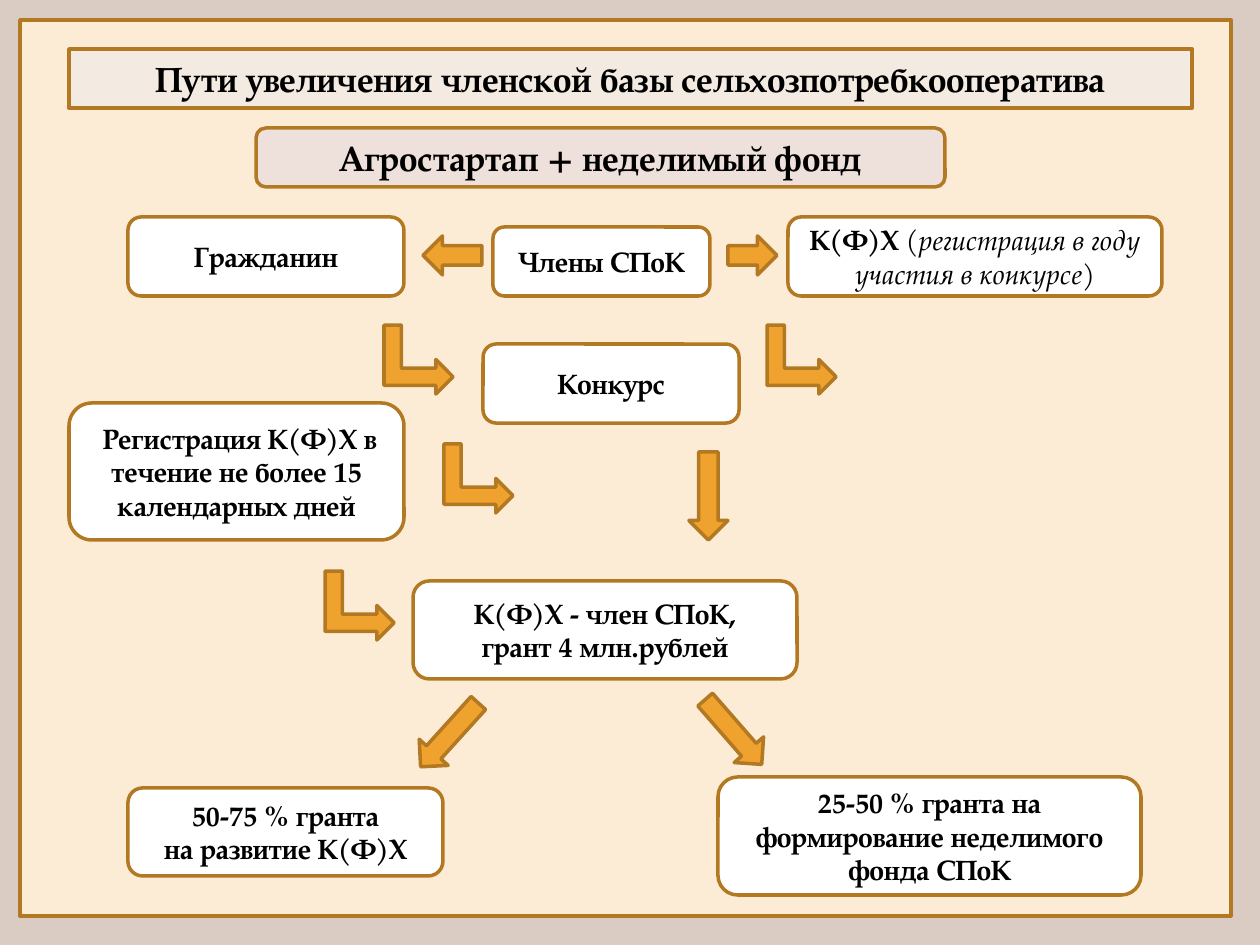
import pptx
import pptx.util
import pptx.dml.color
import pptx.enum.shapes
import pptx.enum.text
import pptx.oxml.ns
import lxml.etree

FONT = "TeX Gyre Pagella"
EDGE = "B27822"
GOLD = "F0A22E"
KIND = pptx.enum.shapes.MSO_SHAPE

BOXES = [
    ((256, 128, 689, 59), "Агростартап + неделимый фонд", "EEE0DB", 20),
    ((128, 217, 276, 79), "Гражданин", "FFFFFF", 16),
    ((493, 227, 217, 69), "Члены СПоК", "FFFFFF", 16),
    ((483, 344, 256, 79), "Конкурс", "FFFFFF", 16),
    ((69, 403, 335, 137), " Регистрация К(Ф)Х в течение не более 15 календарных дней", "FFFFFF", 16),
    ((413, 581, 384, 98), "К(Ф)Х - член СПоК,\nгрант 4 млн.рублей", "FFFFFF", 16),
    ((128, 788, 315, 88), "50-75 % гранта\nна развитие К(Ф)Х", "FFFFFF", 16),
    ((718, 777, 423, 118), "25-50 % гранта на формирование неделимого фонда СПоК", "FFFFFF", 16),
]
BENDS = [(384, 325), (767, 325), (444, 444), (325, 571)]
ARROWS = [
    (KIND.LEFT_ARROW, (423, 236, 59, 39), 0),
    (KIND.RIGHT_ARROW, (728, 236, 49, 39), 0),
    (KIND.DOWN_ARROW, (689, 452, 39, 88), 0),
    (KIND.DOWN_ARROW, (430, 692, 39, 86), 42.2),
    (KIND.DOWN_ARROW, (714, 689, 39, 86), 318.9),
]


def px(n):
    return pptx.util.Emu(round(n * 914400 / 126))


def tint(hue):
    return pptx.dml.color.RGBColor.from_string(hue)


def apply(item, form):
    for key, value in form.items():
        setattr(item, key, value)


def place(item, area):
    apply(item, dict(zip(("left", "top", "width", "height"), map(px, area))))


def paint(shape, fill):
    shape.fill.solid()
    shape.fill.fore_color.rgb = tint(fill)
    shape.line.color.rgb = tint(EDGE)
    shape.line.width = pptx.util.Pt(2)


def draw(slide, kind, area, fill, turn=0):
    shape = slide.shapes.add_shape(kind, *map(px, area))
    paint(shape, fill)
    shape.shadow.inherit = False
    shape.rotation = turn
    return shape


def add_run(para, text, size, **form):
    run = para.add_run()
    run.text = text
    apply(run.font, {"name": FONT, "size": pptx.util.Pt(size), "bold": True, **form})
    run.font.color.rgb = tint("000000")


def write(shape, text, size):
    frame = shape.text_frame
    apply(frame, {
        "word_wrap": True,
        "auto_size": pptx.enum.text.MSO_AUTO_SIZE.NONE,
        "vertical_anchor": pptx.enum.text.MSO_ANCHOR.MIDDLE,
    })
    for i, line in enumerate(text.split("\n")):
        para = frame.add_paragraph() if i else frame.paragraphs[0]
        para.alignment = pptx.enum.text.PP_ALIGN.CENTER
        add_run(para, line, size)


def add_box(slide, area, text, fill, size):
    box = draw(slide, KIND.ROUNDED_RECTANGLE, area, fill)
    write(box, text, size)
    return box


def add_title(slide, area, text):
    title = slide.shapes.title
    place(title, area)
    geom = lxml.etree.SubElement(
        title._element.spPr, pptx.oxml.ns.qn("a:prstGeom"), prst="roundRect")
    lxml.etree.SubElement(geom, pptx.oxml.ns.qn("a:avLst"))
    paint(title, "F3EAE2")
    write(title, text, 20)
    slide.shapes._spTree.append(title._element)


def main():
    deck = pptx.Presentation()
    apply(deck, {"slide_width": px(1260), "slide_height": px(945)})
    slide = deck.slides.add_slide(deck.slide_layouts[5])
    back = slide.background.fill
    back.solid()
    back.fore_color.rgb = tint("DACBC3")

    draw(slide, KIND.RECTANGLE, (20, 20, 1211, 896), "FCECD5")
    add_title(slide, (69, 49, 1123, 59),
              "Пути увеличения членской базы сельхозпотребкооператива")
    for box in BOXES:
        add_box(slide, *box)
    farm = add_box(slide, (788, 217, 374, 79), "К(Ф)Х ", "FFFFFF", 16)
    add_run(farm.text_frame.paragraphs[0], "(регистрация в году участия в конкурсе)",
            16, bold=False, italic=True)
    for spot in BENDS:
        draw(slide, KIND.BENT_UP_ARROW, (*spot, 69, 69), GOLD, 90)
    for kind, area, turn in ARROWS:
        draw(slide, kind, area, GOLD, turn)
    deck.save("out.pptx")


if __name__ == "__main__":
    main()
